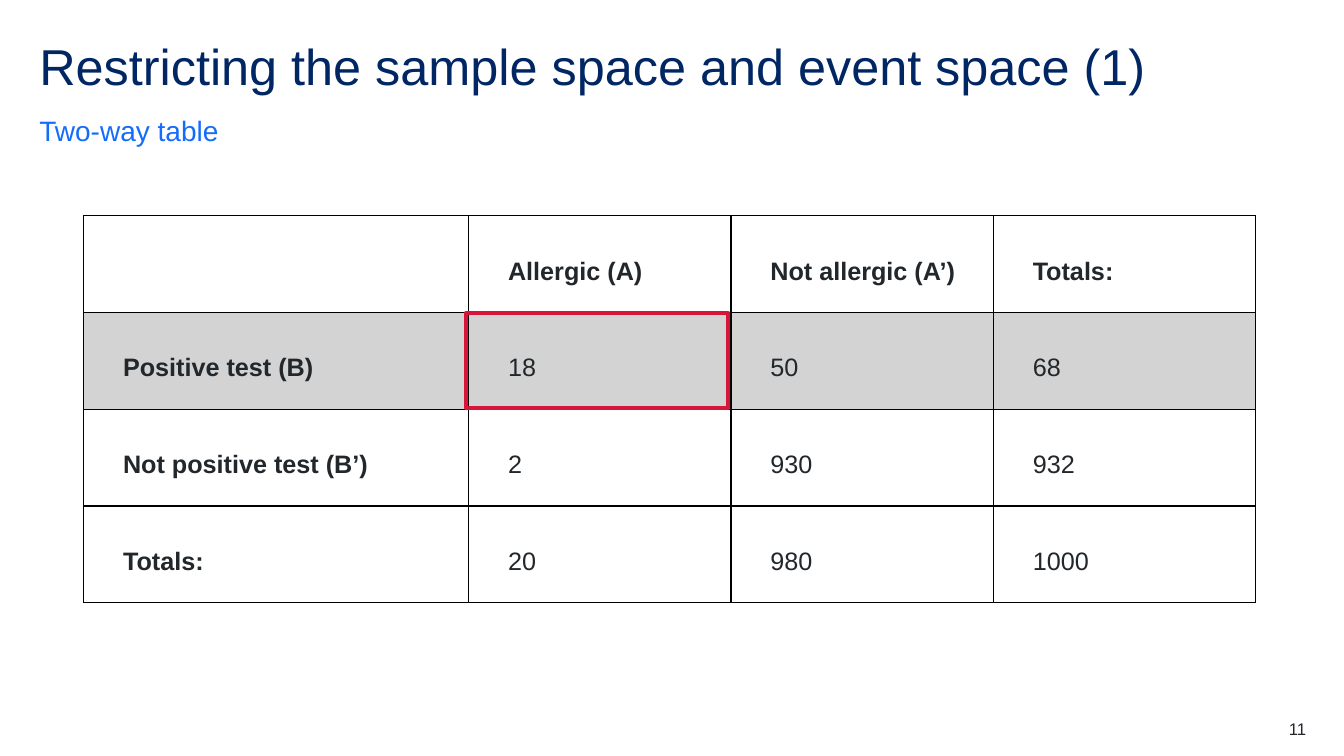
from lxml.etree import SubElement
from pptx import Presentation
from pptx.dml.color import RGBColor
from pptx.enum.shapes import MSO_SHAPE
from pptx.enum.text import MSO_ANCHOR, PP_ALIGN
from pptx.oxml import parse_xml
from pptx.oxml.ns import nsdecls, qn
from pptx.util import Pt

# Content
TITLE = "Restricting the sample space and event space (1)"
SUBTITLE = "Two-way table"
PAGE_NUMBER = "11"
ROWS = [
    ("", "Allergic (A)", "Not allergic (A’)", "Totals:"),
    ("Positive test (B)", "18", "50", "68"),
    ("Not positive test (B’)", "2", "930", "932"),
    ("Totals:", "20", "980", "1000"),
]
SHADED_ROW = 1

# Format, lengths in points
COLORS = {"title": "002664", "subtitle": "146CFD", "text": "22272B",
          "shade": "D3D3D3", "border": "000000", "highlight": "D7153A"}
FONT = "Arial"
MARGIN, CONTENT_WIDTH = 28.1, 904.3
TABLE_LEFT, TABLE_TOP = 59.8, 154.2
COLUMN_WIDTHS = [275, 187.4, 187.4, 187.4]
ROW_HEIGHT = 69.1


def color(name):
    return RGBColor.from_string(COLORS[name])


def write(frame, text, size, fill, bold=False, align=PP_ALIGN.LEFT, spacing=1.0,
          before=0, after=0, anchor=MSO_ANCHOR.TOP):
    frame.word_wrap = True
    frame.vertical_anchor = anchor
    para = frame.paragraphs[0]
    para.alignment, para.line_spacing = align, spacing
    para.space_before, para.space_after = Pt(before), Pt(after)
    span = para.add_run()
    span.text = text
    span.font.name, span.font.size, span.font.bold = FONT, Pt(size), bold
    span.font.color.rgb = color(fill)


def place(box, left, top, width, height):
    box.left, box.top, box.width, box.height = map(Pt, (left, top, width, height))
    frame = box.text_frame
    frame.margin_left = frame.margin_right = frame.margin_top = frame.margin_bottom = 0
    return frame


def add_borders(cell):
    properties = cell._tc.get_or_add_tcPr()
    for position, side in enumerate(("lnL", "lnR", "lnT", "lnB")):
        properties.insert(position, parse_xml(
            f'<a:{side} {nsdecls("a")} w="{Pt(1)}"><a:solidFill>'
            f'<a:srgbClr val="{COLORS["border"]}"/></a:solidFill></a:{side}>'))


deck = Presentation()
deck.slide_width, deck.slide_height = Pt(960), Pt(540)
page = deck.slides.add_slide(deck.slide_layouts[1])

# Title and subtitle
write(place(page.shapes.title, MARGIN, 28.1, CONTENT_WIDTH, 43.2), TITLE, 36, "title",
      spacing=0.9, anchor=MSO_ANCHOR.MIDDLE)
subtitle = place(page.placeholders[1], MARGIN, 77, CONTENT_WIDTH, 28.1)
write(subtitle, SUBTITLE, 20, "subtitle", spacing=1.5, after=12, anchor=MSO_ANCHOR.BOTTOM)
bullet_format = subtitle.paragraphs[0]._p.get_or_add_pPr()
bullet_format.set("marL", "0")
bullet_format.set("indent", "0")
SubElement(bullet_format, qn("a:buNone"))

# Two-way table
table = page.shapes.add_table(
    len(ROWS), len(COLUMN_WIDTHS), Pt(TABLE_LEFT), Pt(TABLE_TOP),
    Pt(sum(COLUMN_WIDTHS)), Pt(ROW_HEIGHT * len(ROWS))).table
table.horz_banding = table.first_row = False
for column, width in zip(table.columns, COLUMN_WIDTHS):
    column.width = Pt(width)
for row_index, texts in enumerate(ROWS):
    table.rows[row_index].height = Pt(ROW_HEIGHT)
    for column_index, text in enumerate(texts):
        cell = table.cell(row_index, column_index)
        cell.margin_left, cell.margin_right = Pt(28.1), Pt(5)
        cell.margin_top = cell.margin_bottom = 0
        cell.vertical_anchor = MSO_ANCHOR.MIDDLE
        if row_index == SHADED_ROW:
            cell.fill.solid()
            cell.fill.fore_color.rgb = color("shade")
        else:
            cell.fill.background()
        add_borders(cell)
        if text:
            write(cell.text_frame, text, 18, "text", bold=row_index == 0 or column_index == 0,
                  spacing=1.5, before=12, after=6, anchor=MSO_ANCHOR.MIDDLE)

# Frame around the positive and allergic cell
highlight = page.shapes.add_shape(
    MSO_SHAPE.RECTANGLE, Pt(TABLE_LEFT + COLUMN_WIDTHS[0] - 2),
    Pt(TABLE_TOP + ROW_HEIGHT * SHADED_ROW + 0.5), Pt(COLUMN_WIDTHS[1]), Pt(67.7))
highlight.shadow.inherit = False
highlight.fill.background()
highlight.line.color.rgb = color("highlight")
highlight.line.width = Pt(3)

# Page number
number_box = page.shapes.add_textbox(0, 0, 0, 0)
write(place(number_box, 876.2, 513.4, 56.9, 14.4), PAGE_NUMBER, 12, "text",
      align=PP_ALIGN.RIGHT)

deck.save("out.pptx")
